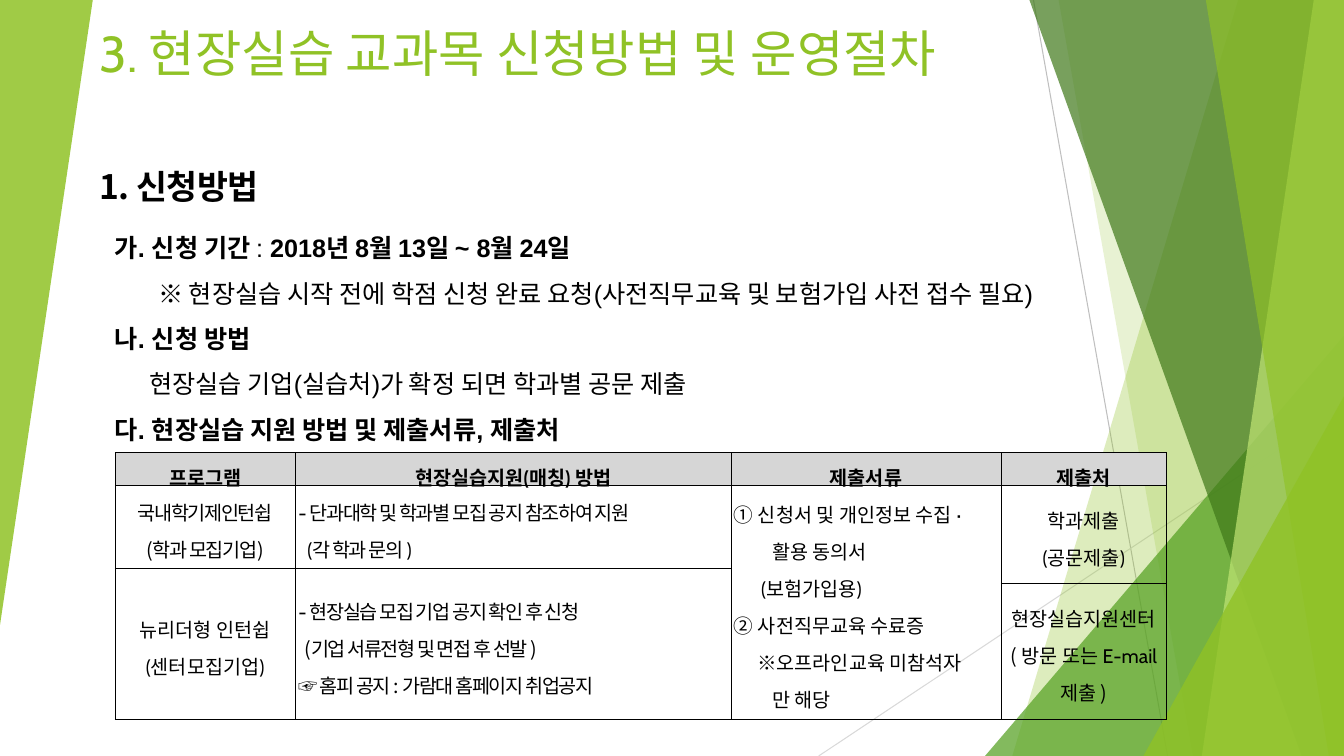
from lxml import etree
from pptx import Presentation
from pptx.dml.color import RGBColor
from pptx.enum.shapes import MSO_CONNECTOR, MSO_SHAPE
from pptx.enum.text import MSO_ANCHOR, MSO_AUTO_SIZE, PP_ALIGN
from pptx.oxml.ns import qn
from pptx.util import Pt

PX = 9144
WIDTH, HEIGHT = 1333, 750
LINE = MSO_CONNECTOR.STRAIGHT
TRIANGLE = MSO_SHAPE.ISOSCELES_TRIANGLE
MIDDLE, BOTTOM = MSO_ANCHOR.MIDDLE, MSO_ANCHOR.BOTTOM
FIT_SHAPE = MSO_AUTO_SIZE.SHAPE_TO_FIT_TEXT
LEFT, CENTER, JUSTIFY = PP_ALIGN.LEFT, PP_ALIGN.CENTER, PP_ALIGN.JUSTIFY

BLACK = RGBColor(0x00, 0x00, 0x00)
GREEN = RGBColor(0x90, 0xC2, 0x26)
MID_GREEN = RGBColor(0x54, 0xA0, 0x21)
DARK_GREEN = RGBColor(0x3F, 0x78, 0x19)
LIGHT_GREEN = RGBColor(0xC0, 0xE4, 0x74)
HEADER_GREY = RGBColor(0xD6, 0xD6, 0xD6)
RAY_GREY = RGBColor(0xBF, 0xBF, 0xBF)
PALE_GREY = RGBColor(0xD9, 0xD9, 0xD9)

CABIN, NOTO, ARIAL = "Cabin", "Noto Sans CJK KR", "Arial"

BODY = [
    (0, [("가. 신청 기간 ", True), (": ", False),
         ("2018년 8월 13일 ~ 8월 24일", True)]),
    (43, [("※ 현장실습 시작 전에 학점 신청 완료 요청"
           "(사전직무교육 및 보험가입 사전 접수 필요)", False)]),
    (0, [("나. 신청 방법", True)]),
    (34, [("현장실습 기업(실습처)가 확정 되면 학과별 공문 제출", False)]),
    (0, [("다. 현장실습 지원 방법 및 제출서류, 제출처", True)]),
]

COLUMNS = [179, 432, 268, 164]
ROWS = [31, 82, 15, 135]
HEADERS = ["프로그램", "현장실습지원(매칭) 방법", "제출서류", "제출처"]
HANGING = 38
CELLS = [
    (1, 0, 1, -1, [(None, [("국내학기제인턴쉽", NOTO)]),
                   (None, [("(학과 모집기업)", NOTO)])]),
    (1, 1, 1, -1, [(0, [("- 단과대학 및 학과별 모집 공지 참조하여 지원", CABIN)]),
                   (9, [("(각 학과 문의 )", CABIN)])]),
    (1, 2, 3, 0, [(0, [("① 신청서 및 개인정보 수집 · 활용 동의서", CABIN)]),
                  (27, [("(보험가입용)", CABIN)]),
                  (0, [("② 사전직무교육 수료증", CABIN)]),
                  (23, [("※오프라인교육 미참석자", CABIN)]),
                  (HANGING, [("만 해당", CABIN)])]),
    (1, 3, 2, 0, [(None, [("학과제출", CABIN)]), (None, [("(공문제출)", CABIN)])]),
    (2, 0, 2, 0, [(None, [("뉴리더형 인턴쉽", CABIN)]),
                  (None, [("(센터모집기업)", CABIN)])]),
    (2, 1, 2, -1, [(0, [("- 현장실습 모집 기업 공지 확인 후 신청", CABIN)]),
                   (6, [("(", NOTO), ("기업 서류전형 및 면접 후 선발 ", CABIN),
                        (")", NOTO)]),
                   (0, [("☞ 홈피 공지 ", CABIN), (": ", NOTO),
                        ("가람대 홈페이지 취업공지", CABIN)])]),
    (3, 3, 1, 0, [(None, [("현장실습지원센터", CABIN)]),
                  (None, [("( ", NOTO), ("방문 또는 E-mail 제출 ", CABIN),
                          (")", NOTO)])]),
]


def add_span(para, text, font, size, color=BLACK, bold=False, spacing=0):
    span = para.add_run()
    span.text = text
    span.font.name = font
    span.font.size = Pt(size)
    span.font.bold = bold
    span.font.color.rgb = color
    properties = span.font._element
    if spacing:
        properties.set("spc", str(int(spacing * 100)))
    east_asian = etree.SubElement(properties, qn("a:ea"))
    east_asian.set("typeface", NOTO)


def next_para(frame, index):
    return frame.add_paragraph() if index else frame.paragraphs[0]


def set_indent(para, margin, first):
    properties = para._p.get_or_add_pPr()
    properties.set("marL", str(margin * PX))
    properties.set("indent", str((first - margin) * PX))


def add_textbox(page, box):
    frame = page.shapes.add_textbox(*(n * PX for n in box)).text_frame
    frame.word_wrap = True
    return frame


def paint(shape, color, opacity):
    shape.shadow.inherit = False
    shape.line.fill.background()
    shape.fill.solid()
    shape.fill.fore_color.rgb = color
    tint = shape._element.spPr.find(qn("a:solidFill"))[0]
    etree.SubElement(tint, qn("a:alpha")).set("val", str(opacity * 1000))


def add_ray(page, start, end, color):
    ray = page.shapes.add_connector(LINE, *(n * PX for n in start + end))
    ray.line.color.rgb = color
    ray.line.width = Pt(0.75)
    etree.SubElement(ray._element.spPr, qn("a:effectLst"))


def add_band(page, top, bottom, color, opacity):
    outline = page.shapes.build_freeform(top, 0, scale=PX)
    outline.add_line_segments([(WIDTH, 0), (WIDTH, HEIGHT), (bottom, HEIGHT)])
    paint(outline.convert_to_shape(), color, opacity)


def add_corner(page, box, color, opacity, rotation=0):
    corner = page.shapes.add_shape(TRIANGLE, *(n * PX for n in box))
    corner.adjustments[0] = 1
    corner.rotation = rotation
    paint(corner, color, opacity)


def draw_backdrop(page):
    add_ray(page, (1025, 0), (1158, HEIGHT), RAY_GREY)
    add_ray(page, (WIDTH, 403), (812, HEIGHT), PALE_GREY)
    add_band(page, 1228, 1004, GREEN, 30)
    add_band(page, 1050, 1183, GREEN, 20)
    add_corner(page, (977, 333, 356, 417), MID_GREEN, 72)
    add_band(page, 1021, 1291, DARK_GREEN, 70)
    add_band(page, 1303, 1192, LIGHT_GREEN, 70)
    add_band(page, 1196, 1318, GREEN, 65)
    add_corner(page, (1134, 393, 199, 357), GREEN, 80)
    add_corner(page, (0, 0, 92, 620), GREEN, 85, 180)


def draw_title(page, box):
    frame = add_textbox(page, box)
    frame.vertical_anchor = BOTTOM
    add_span(frame.paragraphs[0], "3. 현장실습 교과목 신청방법 및 운영절차",
             CABIN, 36, GREEN)


def draw_heading(page, box):
    frame = add_textbox(page, box)
    frame.auto_size = FIT_SHAPE
    para = frame.paragraphs[0]
    para.alignment = JUSTIFY
    para.line_spacing = 1.6
    para.space_before = Pt(5)
    add_span(para, "1. 신청방법", NOTO, 24, bold=True, spacing=-0.5)


def draw_body(page, box):
    frame = add_textbox(page, box)
    frame.auto_size = FIT_SHAPE
    for index, (indent, spans) in enumerate(BODY):
        para = next_para(frame, index)
        para.line_spacing = 1.5
        set_indent(para, indent, indent)
        for text, bold in spans:
            add_span(para, text, ARIAL, 18, bold=bold)


def style_cell(cell, header):
    cell.vertical_anchor = MIDDLE
    cell.margin_left = cell.margin_right = 3 * PX
    cell.margin_top = cell.margin_bottom = PX
    properties = cell._tc.get_or_add_tcPr()
    for side in ("a:lnL", "a:lnR", "a:lnT", "a:lnB"):
        border = etree.SubElement(properties, qn(side), w=str(Pt(0.28)))
        fill = etree.SubElement(border, qn("a:solidFill"))
        etree.SubElement(fill, qn("a:srgbClr"), val=str(BLACK))
    if header:
        cell.fill.solid()
        cell.fill.fore_color.rgb = HEADER_GREY
    else:
        cell.fill.background()


def fill_cell(cell, lines, spacing=0, bold=False):
    for index, (first, spans) in enumerate(lines):
        para = next_para(cell.text_frame, index)
        para.line_spacing = 1.3
        para.alignment = CENTER if first is None else LEFT
        if first is not None:
            set_indent(para, HANGING, first)
        for text, font in spans:
            add_span(para, text, font, 14, bold=bold, spacing=spacing)


def draw_table(page, left, top):
    box = (left, top, sum(COLUMNS), sum(ROWS))
    table = page.shapes.add_table(len(ROWS), len(COLUMNS),
                                  *(n * PX for n in box)).table
    table.first_row = table.horz_banding = False
    for column, width in zip(table.columns, COLUMNS):
        column.width = width * PX
    for index, height in enumerate(ROWS):
        table.rows[index].height = height * PX
        for cell in table.rows[index].cells:
            style_cell(cell, index == 0)
    for column, header in enumerate(HEADERS):
        fill_cell(table.cell(0, column), [(None, [(header, CABIN)])], bold=True)
    for row, column, depth, spacing, lines in CELLS:
        cell = table.cell(row, column)
        if depth > 1:
            cell.merge(table.cell(row + depth - 1, column))
        fill_cell(cell, lines, spacing)


def main():
    deck = Presentation()
    deck.slide_width, deck.slide_height = WIDTH * PX, HEIGHT * PX
    page = deck.slides.add_slide(deck.slide_layouts[6])
    draw_backdrop(page)
    draw_title(page, (89, 10, 948, 77))
    draw_heading(page, (89, 136, 991, 75))
    draw_body(page, (104, 211, 1054, 283))
    draw_table(page, 114, 449)
    deck.save("out.pptx")


if __name__ == "__main__":
    main()
